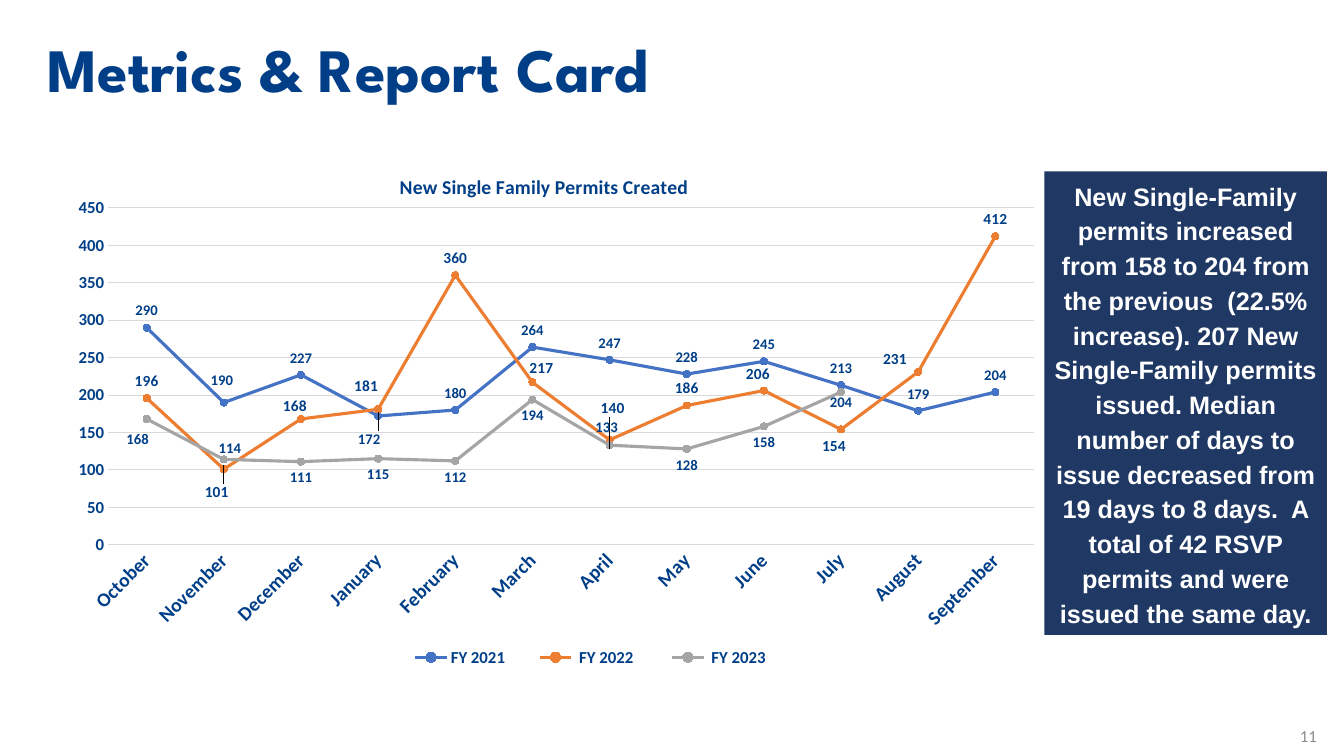
from lxml import etree
from pptx import Presentation
from pptx.chart.data import CategoryChartData
from pptx.dml.color import RGBColor
from pptx.enum.chart import (XL_CHART_TYPE, XL_LABEL_POSITION, XL_LEGEND_POSITION,
                             XL_MARKER_STYLE, XL_TICK_MARK)
from pptx.enum.shapes import MSO_SHAPE
from pptx.enum.text import MSO_ANCHOR, MSO_AUTO_SIZE, PP_ALIGN
from pptx.oxml.ns import qn
from pptx.util import Pt

PX = 9144
NAVY = RGBColor(0x00, 0x3F, 0x88)
PANEL = RGBColor(0x20, 0x38, 0x64)
WHITE = RGBColor(0xFF, 0xFF, 0xFF)
GRAY = RGBColor(0x8C, 0x8C, 0x8C)
GRID = RGBColor(0xD9, 0xD9, 0xD9)
BLUE = RGBColor(0x44, 0x72, 0xC4)
ORANGE = RGBColor(0xED, 0x7D, 0x31)
SILVER = RGBColor(0xA5, 0xA5, 0xA5)

MONTHS = ["October", "November", "December", "January", "February", "March",
          "April", "May", "June", "July", "August", "September"]
ABOVE, BELOW = XL_LABEL_POSITION.ABOVE, XL_LABEL_POSITION.BELOW
FISCAL_YEARS = [
    ("FY 2021", [290, 190, 227, 172, 180, 264, 247, 228, 245, 213, 179, 204],
     BLUE, ABOVE, 10.5, {1: (-2, -5), 3: (-9, 40)}),
    (" FY 2022 ", [196, 101, 168, 181, 360, 217, 140, 186, 206, 154, 231, 412],
     ORANGE, ABOVE, 11,
     {1: (-7, 40), 2: (-6, 4), 3: (-12, -6), 5: (9, 3), 6: (3, -15),
      8: (-6, 1), 9: (-7, 33), 10: (-23, 4)}),
    (" FY 2023", [168, 114, 111, 115, 112, 194, 133, 128, 158, 204, None, None],
     SILVER, BELOW, 10.5, {0: (-9, 4), 1: (6, -27), 6: (-3, -34), 9: (0, -6)}),
]
SUMMARY = ("New Single-Family permits increased from 158 to 204 from the previous  "
           "(22.5% increase). 207 New Single-Family permits issued. Median number of "
           "days to issue decreased from 19 days to 8 days.  A total of 42 RSVP "
           "permits and were issued the same day.")


def emu(*lengths):
    """Turn px lengths into EMU."""
    return [length * PX for length in lengths]


def set_font(font, size, color=NAVY, name="Calibri", bold=True):
    """Apply one format to a font."""
    font.size, font.name, font.bold = Pt(size), name, bold
    font.color.rgb = color


def write_text(shape, text, align=PP_ALIGN.LEFT, anchor=MSO_ANCHOR.TOP,
               spacing=None, grow=False, **font_format):
    """Write one formatted paragraph into a shape."""
    frame = shape.text_frame
    frame.word_wrap = True
    frame.vertical_anchor = anchor
    if grow:
        frame.auto_size = MSO_AUTO_SIZE.SHAPE_TO_FIT_TEXT
    paragraph = frame.paragraphs[0]
    paragraph.alignment = align
    if spacing:
        paragraph.line_spacing = spacing
    run = paragraph.add_run()
    run.text = text
    set_font(run.font, **font_format)


def place(element, after, **settings):
    """Give a chart element a manual layout following the named child."""
    for old_layout in element.findall(qn("c:layout")):
        element.remove(old_layout)
    layout = etree.Element(qn("c:layout"))
    manual = etree.SubElement(layout, qn("c:manualLayout"))
    for key, value in settings.items():
        etree.SubElement(manual, qn(f"c:{key}")).set("val", str(value))
    if after is None:
        element.insert(0, layout)
    else:
        element.find(qn(after)).addnext(layout)


def format_axes(chart):
    """Style the month axis, the value axis and its gridlines."""
    months, values = chart.category_axis, chart.value_axis
    for axis, size in ((months, 14), (values, 12)):
        axis.major_tick_mark = axis.minor_tick_mark = XL_TICK_MARK.NONE
        set_font(axis.tick_labels.font, size)
    months.format.line.color.rgb = GRID
    months.format.line.width = Pt(0.75)
    months._element.find(qn("c:txPr")).find(qn("a:bodyPr")).set("rot", "-2700000")
    values.minimum_scale, values.maximum_scale, values.major_unit = 0, 450, 50
    values.format.line.fill.background()
    values.major_gridlines.format.line.color.rgb = GRID
    values.major_gridlines.format.line.width = Pt(0.75)


def format_series(series, color, position, size, shifts, width, height):
    """Style a line with its markers and labels, moving the shifted labels."""
    series.smooth = False
    series.format.line.color.rgb = color
    series.format.line.width = Pt(2.25)
    series.marker.style, series.marker.size = XL_MARKER_STYLE.CIRCLE, 5
    series.marker.format.fill.solid()
    series.marker.format.fill.fore_color.rgb = color
    series.marker.format.line.color.rgb = color
    labels = series.data_labels
    labels.show_value, labels.position = True, position
    set_font(labels.font, size)
    for index, (right, down) in shifts.items():
        label = series.points[index].data_label
        set_font(label.font, size)
        label.position = position
        element = labels._element.xpath(f"c:dLbl[c:idx/@val='{index}']")[0]
        place(element, "c:idx", x=round(right / width, 4), y=round(down / height, 4))


def add_permit_chart(slide, left, top, width, height):
    """Add the line chart of permits by month and fiscal year."""
    data = CategoryChartData()
    data.categories = MONTHS
    for name, values, *_ in FISCAL_YEARS:
        data.add_series(name, values)
    chart = slide.shapes.add_chart(XL_CHART_TYPE.LINE_MARKERS,
                                   *emu(left, top, width, height), data).chart
    chart.font.name, chart.font.size = "Calibri", Pt(10)
    chart.plots[0].vary_by_categories = False

    chart.has_title = True
    title = chart.chart_title
    run = title.text_frame.paragraphs[0].add_run()
    run.text = "New Single Family Permits Created"
    set_font(run.font, 14)
    title.include_in_layout = False
    place(title._element, "c:tx", xMode="edge", yMode="edge", x=0.36, y=0.04)

    chart.has_legend = True
    legend = chart.legend
    legend.position = XL_LEGEND_POSITION.BOTTOM
    legend.include_in_layout = False
    set_font(legend.font, 12)
    place(legend._element, "c:legendPos", xMode="edge", yMode="edge",
          x=0.35, y=0.95, w=0.41, h=0.05)

    place(chart._chartSpace.chart.plotArea, None, layoutTarget="inner",
          xMode="edge", yMode="edge", x=0.071, y=0.112, w=0.929, h=0.643)
    format_axes(chart)
    for series, (_, _, *style) in zip(chart.plots[0].series, FISCAL_YEARS):
        format_series(series, *style, width, height)


def add_heading(slide, left, top, width, height):
    """Add the slide heading."""
    box = slide.shapes.add_textbox(*emu(left, top, width, height))
    write_text(box, "Metrics & Report Card", grow=True, size=44, name="League Spartan")


def add_summary(slide, left, top, width, height):
    """Add the dark panel with the written summary."""
    panel = slide.shapes.add_shape(MSO_SHAPE.RECTANGLE, *emu(left, top, width, height))
    panel.shadow.inherit = False
    panel.fill.solid()
    panel.fill.fore_color.rgb = PANEL
    panel.line.fill.background()
    write_text(panel, SUMMARY, align=PP_ALIGN.CENTER, spacing=1.15, grow=True,
               size=18, color=WHITE, name="Arial")


def add_page_number(slide, left, top, width, height):
    """Add the page number."""
    box = slide.shapes.add_textbox(*emu(left, top, width, height))
    write_text(box, "11", align=PP_ALIGN.RIGHT, anchor=MSO_ANCHOR.MIDDLE,
               size=12, color=GRAY, bold=False)


def main():
    """Build and save the slide."""
    presentation = Presentation()
    presentation.slide_width, presentation.slide_height = emu(1333, 750)
    slide = presentation.slides.add_slide(presentation.slide_layouts[6])
    add_page_number(slide, 1016, 710, 300, 40)
    add_heading(slide, 37, 26, 1073, 84)
    add_permit_chart(slide, 37, 148, 989, 520)
    add_summary(slide, 1036, 170, 280, 460)
    presentation.save("out.pptx")


if __name__ == "__main__":
    main()
